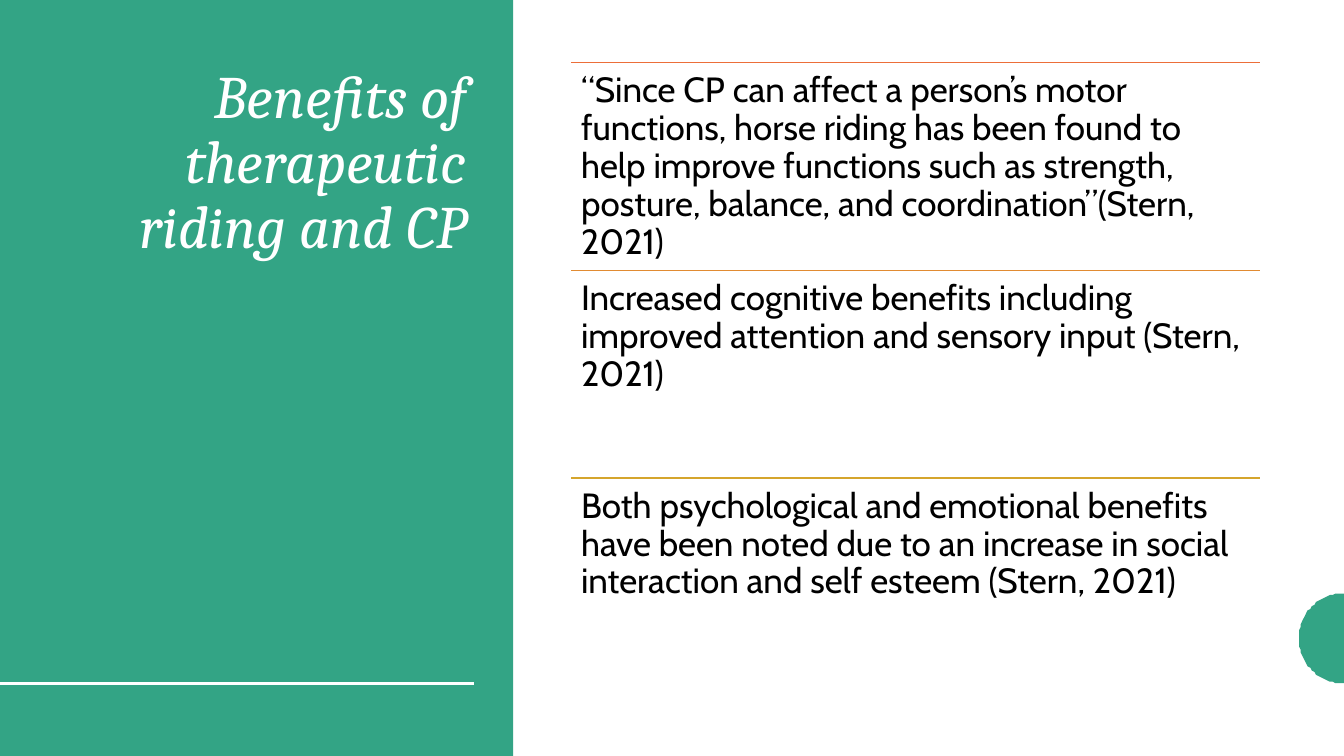
from math import cos, pi, sin

from lxml import etree
from pptx import Presentation
from pptx.dml.color import RGBColor
from pptx.enum.shapes import MSO_CONNECTOR, MSO_SHAPE
from pptx.enum.text import MSO_ANCHOR, MSO_AUTO_SIZE, PP_ALIGN
from pptx.oxml.ns import qn
from pptx.util import Pt

RECT = MSO_SHAPE.RECTANGLE
LINE = MSO_CONNECTOR.STRAIGHT
LEFT, RIGHT = PP_ALIGN.LEFT, PP_ALIGN.RIGHT
TOP = MSO_ANCHOR.TOP
FIXED = MSO_AUTO_SIZE.NONE

COLORS = {
    "green": "33A485",
    "white": "FFFFFF",
    "black": "000000",
    "coral": "EC6E39",
    "orange": "E18B32",
    "gold": "D5A52C",
}

BENEFITS = [
    ("coral", "“Since CP can affect a person’s motor functions, horse riding "
     "has been found to help improve functions such as strength, posture, "
     "balance, and coordination”(Stern, 2021)"),
    ("orange", "Increased cognitive benefits including improved attention "
     "and sensory input (Stern, 2021)"),
    ("gold", "Both psychological and emotional benefits have been noted due "
     "to an increase in social interaction and self esteem (Stern, 2021)"),
]


def write(text, box, font, size, color, align=LEFT, italic=False):
    frame = box.text_frame
    frame.word_wrap = True
    frame.auto_size = FIXED
    frame.vertical_anchor = TOP
    frame.margin_left = frame.margin_right = Pt(7.2)
    para = frame.paragraphs[0]
    para.alignment = align
    para.line_spacing = 0.9
    run = para.add_run()
    run.text = text
    run.font.name = font
    run.font.size = Pt(size)
    run.font.italic = italic
    run.font.color.rgb = RGBColor.from_string(COLORS[color])


def rule(left, right, y, color, width):
    line = slide.shapes.add_connector(LINE, Pt(left), Pt(y), Pt(right), Pt(y))
    line.line.color.rgb = RGBColor.from_string(COLORS[color])
    line.line.width = Pt(width)
    etree.SubElement(line._element.spPr, qn("a:effectLst"))


deck = Presentation()
deck.slide_width, deck.slide_height = Pt(960), Pt(540)
slide = deck.slides.add_slide(deck.slide_layouts[5])

radius, steps = 32.4, 48
arc = [(960 - radius * sin(pi * i / steps), 456 - radius * cos(pi * i / steps))
       for i in range(steps + 1)]
path = slide.shapes.build_freeform(*arc[0], scale=Pt(1))
path.add_line_segments(arc[1:], close=True)
dome = path.convert_to_shape()
panel = slide.shapes.add_shape(RECT, Pt(0), Pt(0), Pt(366.5), Pt(540))
for shape in (dome, panel):
    shape.shadow.inherit = False
    shape.fill.solid()
    shape.fill.fore_color.rgb = RGBColor.from_string(COLORS["green"])
    shape.line.fill.background()

title = slide.shapes.title
title.left, title.top, title.width, title.height = Pt(60), Pt(44), Pt(280.6), Pt(390)
write("Benefits of therapeutic riding and CP", box=title, font="Cambria",
      size=43, color="white", align=RIGHT, italic=True)
panel._element.addnext(title._element)
rule(0, 338.5, 488.3, "white", 2)

left, top, width, step = 408, 44.8, 492, 148.3
for i, (color, text) in enumerate(BENEFITS):
    y = top + i * step
    rule(left, left + width, y, color, 1)
    box = slide.shapes.add_textbox(Pt(left), Pt(y), Pt(width), Pt(step))
    box.text_frame.margin_top = box.text_frame.margin_bottom = Pt(7.2)
    write(text, box=box, font="Cabin", size=25, color="black")

deck.save("out.pptx")
